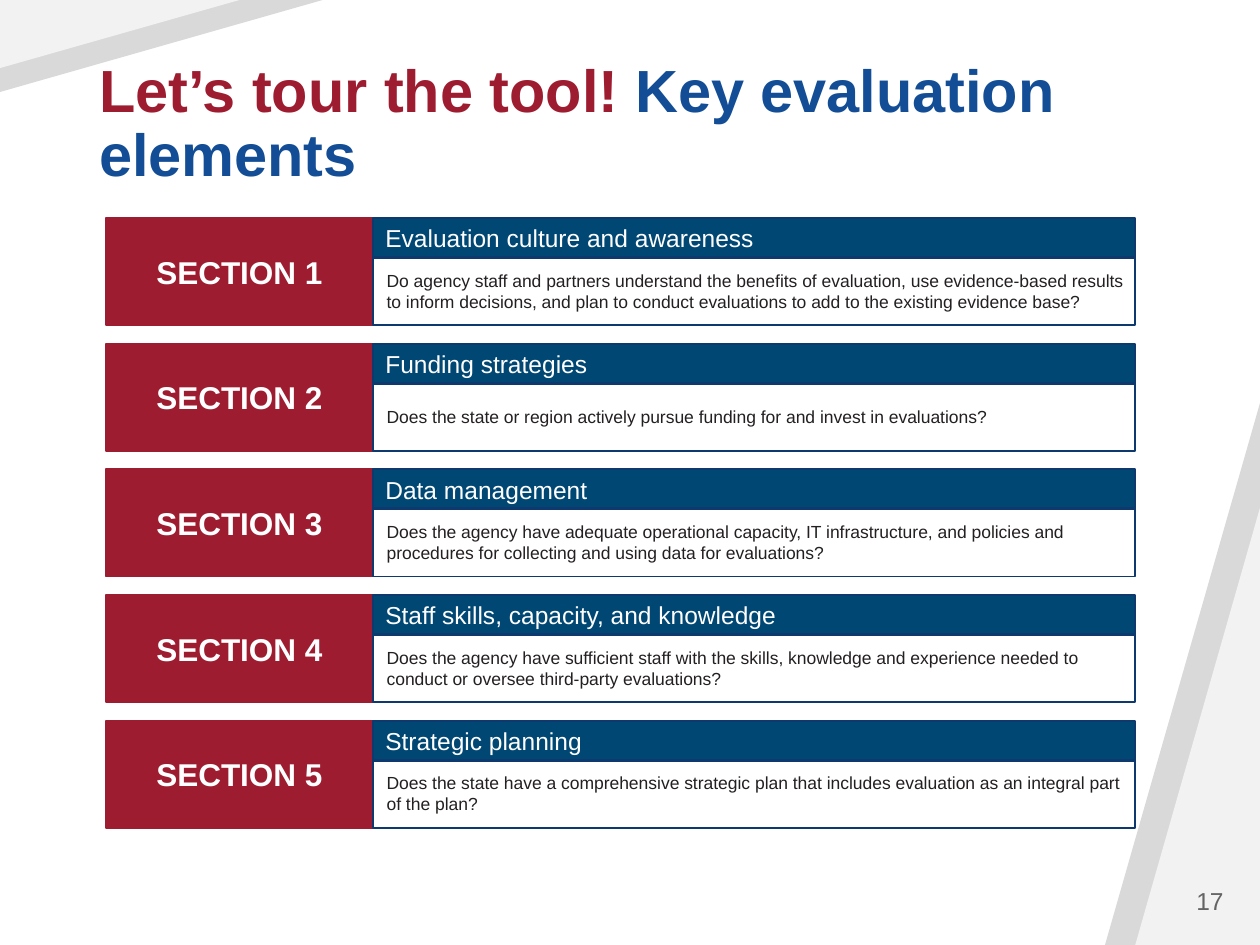
from dataclasses import dataclass

from pptx import Presentation
from pptx.dml.color import RGBColor
from pptx.enum.shapes import MSO_SHAPE
from pptx.enum.text import MSO_ANCHOR, PP_ALIGN
from pptx.util import Inches, Pt

COLORS = {
    "red": "9E1C30", "blue": "124D95", "navy": "004773", "border": "0D396E",
    "white": "FFFFFF", "ink": "242021", "number": "646464",
    "gray": "D9D9D9", "light": "F2F2F2",
}
FONT = "Arial"


@dataclass
class Box:
    left: float
    top: float
    width: float
    height: float

    def lengths(self):
        return [Inches(v) for v in (self.left, self.top, self.width, self.height)]


@dataclass
class Section:
    heading: str
    question: str
    lines: int = 2


SECTIONS = [
    Section("Evaluation culture and awareness",
            "Do agency staff and partners understand the benefits of evaluation, "
            "use evidence-based results to inform decisions, and plan to conduct "
            "evaluations to add to the existing evidence base?"),
    Section("Funding strategies",
            "Does the state or region actively pursue funding for and invest in "
            "evaluations?", lines=1),
    Section("Data management",
            "Does the agency have adequate operational capacity, IT infrastructure, "
            "and policies and procedures for collecting and using data for evaluations?"),
    Section("Staff skills, capacity, and knowledge",
            "Does the agency have sufficient staff with the skills, knowledge and "
            "experience needed to conduct or oversee third-party evaluations?"),
    Section("Strategic planning",
            "Does the state have a comprehensive strategic plan that includes "
            "evaluation as an integral part of the plan?"),
]

# Row geometry
FIRST_TOP, LAST_TOP = 1.73, 5.72
PITCH = (LAST_TOP - FIRST_TOP) / (len(SECTIONS) - 1)
LABEL_LEFT, LABEL_WIDTH = 0.84, 2.12
BODY_LEFT, BODY_WIDTH = LABEL_LEFT + LABEL_WIDTH, 6.05
ROW_HEIGHT, HEADING_HEIGHT, BODY_OFFSET = 0.85, 0.32, 0.31
QUESTION_HEIGHTS = {1: 0.27, 2: 0.44}


def rgb(name: str) -> RGBColor:
    return RGBColor.from_string(COLORS[name])


def write(shape, runs: list[tuple[str, str]], size: int, bold: bool = False,
          align=PP_ALIGN.LEFT, anchor=MSO_ANCHOR.MIDDLE):
    """Fill a shape with one paragraph of (text, colour) runs."""
    frame = shape.text_frame
    frame.word_wrap = True
    frame.vertical_anchor = anchor
    paragraph = frame.paragraphs[0]
    paragraph.alignment = align
    for text, color in runs:
        run = paragraph.add_run()
        run.text = text
        run.font.name = FONT
        run.font.size = Pt(size)
        run.font.bold = bold
        run.font.color.rgb = rgb(color)
    return paragraph


def add_block(slide, box: Box, fill: str | None = None, line: str | None = None,
              kind=MSO_SHAPE.RECTANGLE):
    block = slide.shapes.add_shape(kind, *box.lengths())
    block.shadow.inherit = False
    if fill:
        block.fill.solid()
        block.fill.fore_color.rgb = rgb(fill)
    else:
        block.fill.background()
    if line:
        block.line.color.rgb = rgb(line)
        block.line.width = Pt(1)
    else:
        block.line.fill.background()
    return block


def add_corner(slide, box: Box, fill: str, rotation: int) -> None:
    corner = add_block(slide, box, fill, kind=MSO_SHAPE.ISOSCELES_TRIANGLE)
    corner.adjustments[0] = 1
    corner.rotation = rotation


def add_section(slide, index: int, section: Section) -> None:
    top = FIRST_TOP + index * PITCH
    label = add_block(slide, Box(LABEL_LEFT, top, LABEL_WIDTH, ROW_HEIGHT), "red", "red")
    write(label, [(f"SECTION {index + 1}", "white")], 18, True, PP_ALIGN.CENTER)

    heading = add_block(slide, Box(BODY_LEFT, top, BODY_WIDTH, HEADING_HEIGHT),
                        "navy", "border")
    write(heading, [(section.heading, "white")], 14)

    body = Box(BODY_LEFT, top + BODY_OFFSET, BODY_WIDTH, ROW_HEIGHT - BODY_OFFSET)
    add_block(slide, body, line="border")

    # Question, centred in its frame
    height = QUESTION_HEIGHTS[section.lines]
    question_top = body.top + (body.height - height) / 2
    question = slide.shapes.add_textbox(
        *Box(BODY_LEFT + 0.01, question_top, BODY_WIDTH, height).lengths())
    write(question, [(section.question, "ink")], 10, anchor=MSO_ANCHOR.TOP)


def main() -> None:
    deck = Presentation()
    deck.slide_width, deck.slide_height = Inches(10), Inches(7.5)
    slide = deck.slides.add_slide(deck.slide_layouts[6])

    # Corner decoration
    add_corner(slide, Box(8.77, 3.2, 1.23, 4.3), "gray", 0)
    add_corner(slide, Box(9.01, 4.03, 0.99, 3.47), "light", 0)
    add_corner(slide, Box(0, 0, 2.56, 0.73), "gray", 180)
    add_corner(slide, Box(0, 0, 1.9, 0.54), "light", 180)

    # Title and page number
    title = slide.shapes.add_textbox(*Box(0.69, 0.4, 8.7, 1.15).lengths())
    title_line = write(title, [("Let’s tour the tool! ", "red"),
                               ("Key evaluation elements", "blue")],
                       34, True, anchor=MSO_ANCHOR.BOTTOM)
    title_line.line_spacing = 0.9
    page_number = slide.shapes.add_textbox(*Box(8.41, 6.95, 1.4, 0.4).lengths())
    write(page_number, [("17", "number")], 14, align=PP_ALIGN.RIGHT)

    # Evaluation sections
    for index, section in enumerate(SECTIONS):
        add_section(slide, index, section)

    deck.save("out.pptx")


if __name__ == "__main__":
    main()
